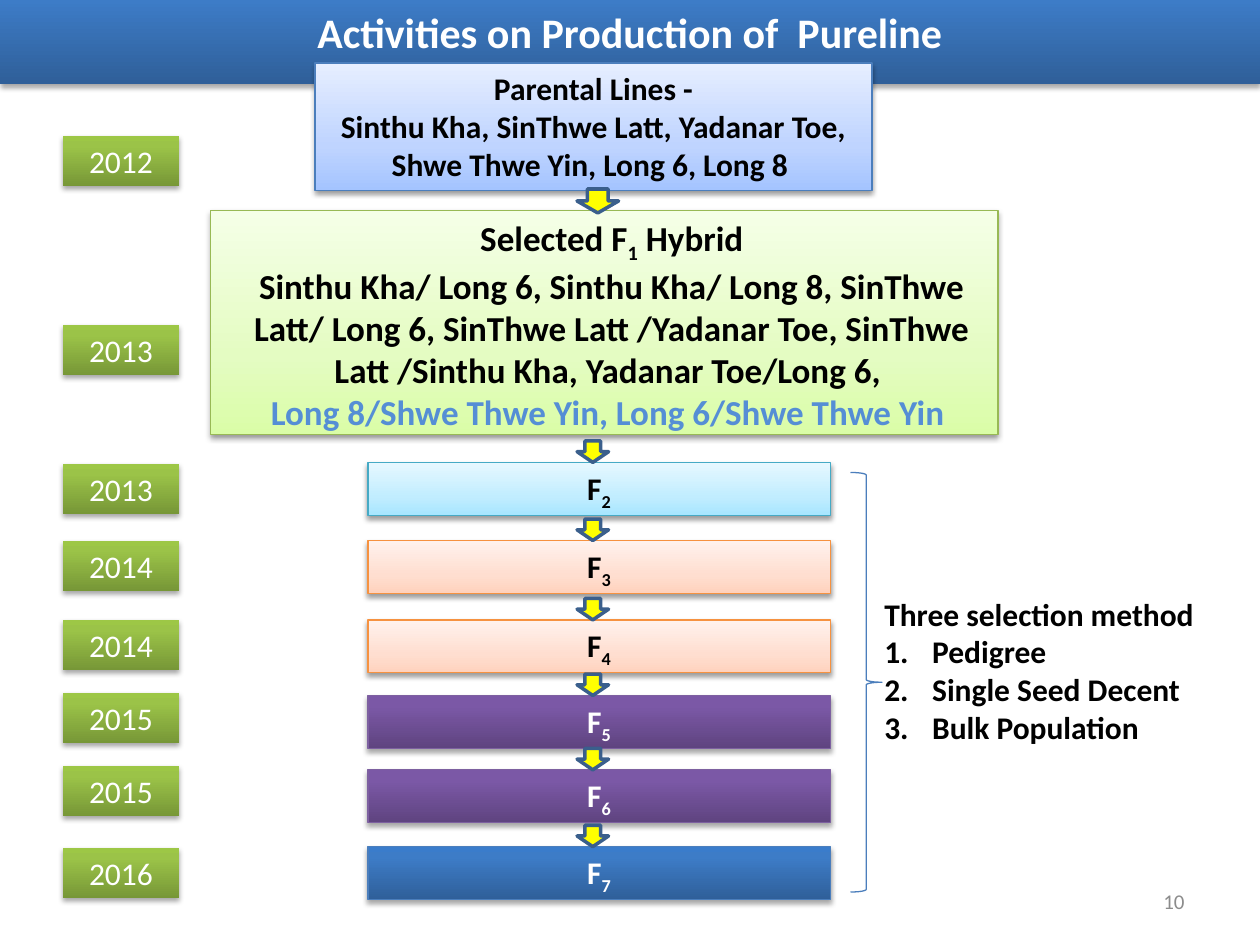
from lxml import etree
from pptx import Presentation
from pptx.dml.color import RGBColor
from pptx.enum.shapes import MSO_SHAPE
from pptx.enum.text import MSO_ANCHOR, MSO_AUTO_SIZE, PP_ALIGN
from pptx.oxml.ns import qn
from pptx.util import Inches, Pt

RECT, ARROW, BRACE = MSO_SHAPE.RECTANGLE, MSO_SHAPE.DOWN_ARROW, MSO_SHAPE.RIGHT_BRACE
TOP, MIDDLE = MSO_ANCHOR.TOP, MSO_ANCHOR.MIDDLE
GROW = MSO_AUTO_SIZE.SHAPE_TO_FIT_TEXT
LEFT, CENTER, RIGHT = PP_ALIGN.LEFT, PP_ALIGN.CENTER, PP_ALIGN.RIGHT

SOFT, DEEP = (0, 35, 100), (0, 80, 100)
SKINS = {
    "bar": (DEEP, ("2F5F99", "3D7CC7", "3A7CCB"), None, "FFFFFF"),
    "year": (DEEP, ("779737", "9BC348", "9DC746"), None, "FFFFFF"),
    "blue": (SOFT, ("A4C4FF", "BFD4FF", "E6EEFF"), "4B7EBC", "000000"),
    "green": (SOFT, ("DAFDA7", "E4FCC2", "F5FFE7"), "98B955", "000000"),
    "aqua": (SOFT, ("A7E6FF", "C1EDFF", "E7F8FF"), "46AAC5", "000000"),
    "peach": (SOFT, ("FFD2BD", "FFDED0", "FFF2ED"), "F69240", "000000"),
    "purple": (DEEP, ("5F4480", "7B58A6", "7C57A8"), "7D60A0", "FFFFFF"),
    "navy": (DEEP, ("2F5F99", "3D7CC7", "3A7CCB"), "4B7EBC", "FFFFFF"),
}
STAGES = [
    ("F_2", "aqua", 3.67, "2013", 3.68),
    ("F_3", "peach", 4.29, "2014", 4.29),
    ("F_4", "peach", 4.92, "2014", 4.92),
    ("F_5", "purple", 5.52, "2015", 5.5),
    ("F_6", "purple", 6.11, "2015", 6.08),
    ("F_7", "navy", 6.72, "2016", 6.73),
]
PARENTS = [
    "Parental Lines -",
    "Sinthu Kha, SinThwe Latt, Yadanar Toe, Shwe Thwe Yin, Long 6, Long 8 ",
]
HYBRIDS = [
    "Selected F_1 Hybrid",
    "Sinthu Kha/ Long 6, Sinthu Kha/ Long 8, SinThwe Latt/ Long 6, "
    "SinThwe Latt /Yadanar Toe, SinThwe Latt /Sinthu Kha, Yadanar Toe/Long 6, ",
    "Long 8/Shwe Thwe Yin, Long 6/Shwe Thwe Yin ",
]
METHODS = ["Three selection method", "Pedigree", "Single Seed Decent", "Bulk Population"]


def color(code):
    """Turn a hex string into a colour."""
    return RGBColor.from_string(code)


def add_node(parent, tag, **attrs):
    """Append an XML element with the given attributes."""
    return etree.SubElement(parent, qn(tag), {k: str(v) for k, v in attrs.items()})


def place(shape, box):
    """Move and size a shape to a box in inches."""
    shape.left, shape.top, shape.width, shape.height = map(Inches, box)


def edge(shape, code, width=0.75):
    """Outline a shape, or clear its outline."""
    if code is None:
        shape.line.fill.background()
    else:
        shape.line.color.rgb = color(code)
        shape.line.width = Pt(width)


def paint(shape, skin):
    """Give a shape the gradient, outline and shadow of a skin."""
    spots, tones, line, _ = SKINS[skin]
    shape.fill.gradient()
    shape.fill.gradient_angle = 90
    stops = shape._element.spPr.find(".//" + qn("a:gsLst"))
    for stop in list(stops):
        stops.remove(stop)
    for spot, tone in zip(spots, tones):
        add_node(add_node(stops, "a:gs", pos=spot * 1000), "a:srgbClr", val=tone)
    edge(shape, line)
    shape.shadow.inherit = False
    dist, alpha = (1.8, 35) if spots == DEEP else (1.6, 38)
    effects = shape._element.spPr.find(qn("a:effectLst"))
    shade = add_node(effects, "a:outerShdw", blurRad=Pt(3.1), dist=Pt(dist),
                     dir=5400000, rotWithShape=0)
    add_node(add_node(shade, "a:srgbClr", val="000000"), "a:alpha", val=alpha * 1000)


def write(shape, lines, size, code, bold=True, align=CENTER, anchor=TOP, indent=0):
    """Fill a shape with paragraphs, where an underscore lowers the next digit."""
    frame = shape.text_frame
    frame.word_wrap, frame.auto_size = True, GROW
    frame.vertical_anchor = anchor
    for i, line in enumerate(lines):
        para = frame.paragraphs[0] if i == 0 else frame.add_paragraph()
        head, *parts = line.split("_")
        para.add_run().text = head
        for part in parts:
            sub = para.add_run()
            sub.text = part[0]
            sub._r.get_or_add_rPr().set("baseline", "-25000")
            if part[1:]:
                para.add_run().text = part[1:]
        para.alignment = align
        if indent:
            para._p.get_or_add_pPr().set("marL", str(Inches(indent)))
        font = para.font
        font.name, font.size, font.bold = "Calibri", Pt(size), bold
        font.color.rgb = color(code)
    return frame


def add_panel(slide, box, lines, skin, size=18, bold=True, indent=0):
    """Add a gradient panel with text."""
    panel = slide.shapes.add_shape(RECT, *map(Inches, box))
    paint(panel, skin)
    return write(panel, lines, size, SKINS[skin][3], bold, indent=indent)


def add_year(slide, top, year):
    """Add a year tag in the left column."""
    add_panel(slide, (0.5, top, 0.92, 0.4), [year], "year", bold=False)


def add_arrow(slide, box):
    """Add a yellow down arrow."""
    arrow = slide.shapes.add_shape(ARROW, *map(Inches, box))
    arrow.shadow.inherit = False
    arrow.fill.solid()
    arrow.fill.fore_color.rgb = color("FFFF00")
    edge(arrow, "3A5F8C", 2)


def add_title(slide, box):
    """Turn the title placeholder into the top bar."""
    title = slide.shapes.title
    place(title, box)
    paint(title, "bar")
    write(title, ["Activities on Production of  Pureline"], 24, "FFFFFF", anchor=MIDDLE)


def add_stages(slide, left, width):
    """Add the generation rows with their arrows and years."""
    for name, skin, top, year, tag in STAGES:
        add_panel(slide, (left, top, width, 0.42), [name], skin)
        add_arrow(slide, (4.58, top - 0.17, 0.25, 0.17))
        add_year(slide, tag, year)


def add_methods(slide, box):
    """Add the brace and the numbered list of methods."""
    brace = slide.shapes.add_shape(BRACE, *map(Inches, (6.75, 3.75, 0.25, 3.33)))
    brace.shadow.inherit = False
    brace.fill.background()
    edge(brace, "4B7EBC")
    note = slide.shapes.add_textbox(*map(Inches, box))
    frame = note.text_frame
    for _ in METHODS[1:]:
        frame.add_paragraph()
    for para, line in zip(frame.paragraphs, METHODS):
        para.text, para.alignment = line, LEFT
        if line != METHODS[0]:
            props = para._p.get_or_add_pPr()
            props.set("marL", str(Inches(0.38)))
            props.set("indent", str(-Inches(0.38)))
            add_node(props, "a:buFont", typeface="+mj-lt")
            add_node(props, "a:buAutoNum", type="arabicPeriod")
        font = para.font
        font.name, font.size, font.bold = "Calibri", Pt(18), True
        font.color.rgb = color("000000")
    frame.word_wrap, frame.auto_size = True, GROW


def main():
    """Build the slide and save it."""
    deck = Presentation()
    deck.slide_width, deck.slide_height = Inches(10), Inches(7.5)
    slide = deck.slides.add_slide(deck.slide_layouts[5])
    add_title(slide, (0, 0, 10, 0.5))
    add_panel(slide, (2.5, 0.5, 4.42, 1.01), PARENTS, "blue")
    hybrids = add_panel(slide, (1.67, 1.67, 6.25, 1.78), HYBRIDS, "green", 20, indent=0.12)
    hybrids.paragraphs[-1].font.color.rgb = color("558ED5")
    add_arrow(slide, (4.58, 1.5, 0.33, 0.19))
    add_year(slide, 1.08, "2012")
    add_year(slide, 2.58, "2013")
    add_stages(slide, 2.92, 3.67)
    add_methods(slide, (6.92, 4.67, 2.83, 1.31))
    number = slide.shapes.add_textbox(*map(Inches, (7.17, 6.95, 2.33, 0.4)))
    write(number, ["10"], 12, "8C8C8C", False, RIGHT, MIDDLE).auto_size = MSO_AUTO_SIZE.NONE
    deck.save("out.pptx")


if __name__ == "__main__":
    main()
